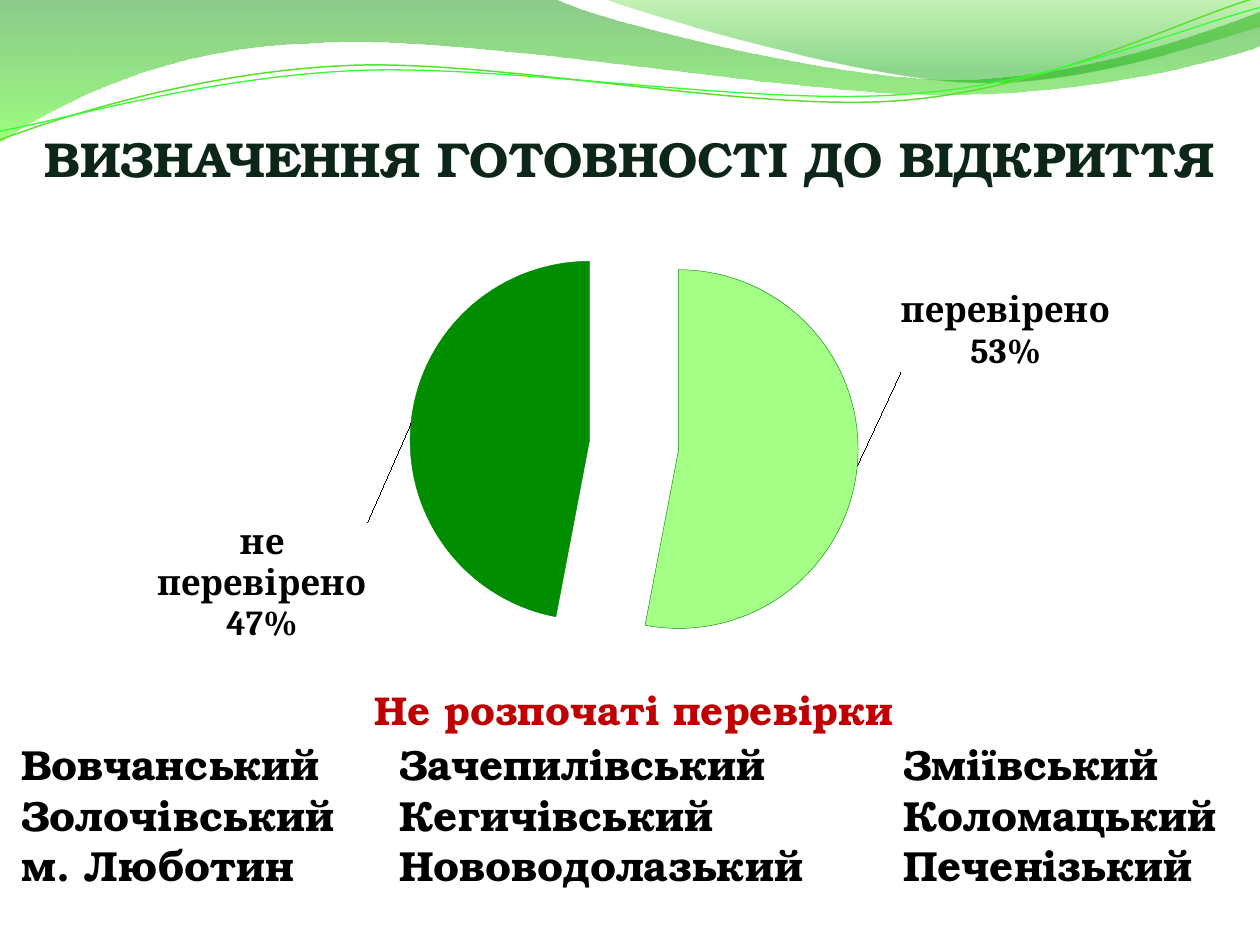
from lxml import etree
from pptx import Presentation, util as u
from pptx.chart.data import CategoryChartData
from pptx.dml.color import RGBColor
from pptx.enum import chart as ch, text
from pptx.oxml import ns

COLORS = {
    "title": "0D261A", "heading": "C00000", "ink": "000000",
    "checked": "A3FF85", "unchecked": "008D00",
    "dark": "008B00", "lime": "51FF17", "grass": "40D30F", "leaf": "00A600",
    "thread": "5AE12D", "neon": "33FF33",
}
SERIF = "TeX Gyre Bonum"


def apply(target, formats):
    for name, value in formats.items():
        if name == "color":
            target.color.rgb = RGBColor.from_string(COLORS[value])
        else:
            setattr(target, name, value)


def place(parent, index, **sizes):
    for old in parent.findall(ns.qn("c:layout")):
        parent.remove(old)
    layout = etree.Element(ns.qn("c:layout"))
    manual = etree.SubElement(layout, ns.qn("c:manualLayout"))
    for tag, value in sizes.items():
        etree.SubElement(manual, ns.qn("c:" + tag), val=str(value))
    parent.insert(index, layout)


prs = Presentation()
prs.slide_width, prs.slide_height = u.Cm(25.4), u.Cm(19.05)
slide = prs.slides.add_slide(prs.slide_layouts[1])

waves = [
    {"start": (0, 0), "stops": [("dark", 0, 45), ("lime", 1, 55)], "segments": [
        (4.4, -0.01), (4.76, 0.17, 6.64, 0.63, 7.58, 0.63), (8.53, 0.63, 9.58, 0.26, 10, 0.09),
        (10.01, 0.36), (9.83, 0.44, 8.7, 0.76, 7.46, 0.75), (6.22, 0.75, 3.82, 0.28, 2.57, 0.34),
        (1.29, 0.36, 0.46, 0.83, -0.01, 1.13)]},
    {"start": (4.79, -0.01), "stops": [("grass", 0, 30), ("leaf", 0.8, 45)], "segments": [
        (5.09, 0.11, 6.82, 0.62, 7.69, 0.65), (8.56, 0.69, 9.61, 0.32, 10, 0.21), (10, 0)]},
    {"start": (0, 1.11), "line": ("thread", 0.85), "segments": [
        (0.48, 0.93, 1.58, 0.57, 2.77, 0.52), (3.95, 0.47, 5.93, 0.89, 7.13, 0.8),
        (8.33, 0.71, 9.38, 0.15, 9.98, -0.02)]},
    {"start": (0, 1.04), "line": ("neon", 0.75), "segments": [
        (0.47, 0.96, 1.64, 0.61, 2.83, 0.56), (4.03, 0.51, 5.97, 0.84, 7.17, 0.75),
        (8.36, 0.67, 9.41, 0.21, 10, 0.06)]},
]
for order, wave in enumerate(waves):
    outline = slide.shapes.build_freeform(*[v * 100 for v in wave["start"]], scale=u.Cm(0.0254))
    for segment in wave["segments"]:
        pairs = zip(segment[::2], segment[1::2])
        outline.add_line_segments([(x * 100, y * 100) for x, y in pairs], close=False)
    ribbon = outline.convert_to_shape()
    ribbon.shadow.inherit = False
    contour = ribbon._element.find(".//" + ns.qn("a:path"))
    steps = iter(contour.findall(ns.qn("a:lnTo")))
    for segment in wave["segments"]:
        knots = [next(steps) for _ in segment[::2]]
        if len(knots) == 3:
            curve = etree.Element(ns.qn("a:cubicBezTo"))
            knots[0].addprevious(curve)
            for knot in knots:
                curve.append(knot[0])
                contour.remove(knot)
    if "stops" in wave:
        etree.SubElement(contour, ns.qn("a:close"))
        ribbon.line.fill.background()
        ribbon.fill.gradient()
        ribbon.fill.gradient_angle = 270
        for stop, (color, position, opacity) in zip(ribbon.fill.gradient_stops, wave["stops"]):
            apply(stop, {"color": color, "position": position})
            tint = stop._gs.find(ns.qn("a:srgbClr"))
            etree.SubElement(tint, ns.qn("a:alpha"), val=str(opacity * 1000))
    else:
        ribbon.fill.background()
        apply(ribbon.line, {"color": wave["line"][0], "width": u.Pt(wave["line"][1])})
    slide.shapes._spTree.insert(2 + order, ribbon._element)

title = slide.shapes.title
apply(title, {"left": u.Cm(0), "top": u.Cm(2.18), "width": u.Cm(25.4), "height": u.Cm(1.6)})
apply(title.text_frame, {
    "text": "ВИЗНАЧЕННЯ ГОТОВНОСТІ ДО ВІДКРИТТЯ", "vertical_anchor": text.MSO_ANCHOR.BOTTOM,
    "margin_left": 0, "margin_right": 0, "margin_top": u.Cm(0.13), "margin_bottom": 0,
    "word_wrap": True, "auto_size": text.MSO_AUTO_SIZE.NONE})
title.text_frame.paragraphs[0].alignment = text.PP_ALIGN.CENTER
apply(title.text_frame.paragraphs[0].runs[0].font,
      {"size": u.Pt(28), "name": SERIF, "bold": True, "color": "title"})

readiness = CategoryChartData()
readiness.categories = ["перевірено", "не перевірено"]
readiness.add_series("Series 1", (53, 47))
pie = slide.shapes.add_chart(ch.XL_CHART_TYPE.PIE, u.Cm(0.58), u.Cm(4.17),
                             u.Cm(24.41), u.Cm(9.32), readiness).chart
apply(pie, {"has_legend": False, "has_title": False})
apply(pie.font, {"size": u.Pt(18), "name": "Cambria", "color": "ink"})
pie.plots[0].vary_by_categories = True
place(pie._chartSpace.chart.plotArea, 0, layoutTarget="inner", xMode="edge", yMode="edge",
      x=0.03, y=0.03, w=0.94, h=0.97)

shares = pie.plots[0].series[0]
explosion = etree.Element(ns.qn("c:explosion"), val="25")
shares._element.find(ns.qn("c:tx")).addnext(explosion)
label_font = {"size": u.Pt(20), "bold": True, "name": "Cambria", "color": "ink"}
apply(shares.data_labels, {"show_percentage": True, "show_category_name": True, "show_value": False})
apply(shares.data_labels.font, label_font)
for index, color in enumerate(["checked", "unchecked"]):
    point = shares.points[index]
    point.format.fill.solid()
    point.format.fill.fore_color.rgb = RGBColor.from_string(COLORS[color])
    apply(point.format.line, {"color": "unchecked", "width": u.Pt(0.25)})
    point.data_label.position = ch.XL_LABEL_POSITION.OUTSIDE_END
    apply(point.data_label.font, label_font)
shifts = [(0.03, -0.38), (-0.03, 0.48)]
for label, (dx, dy) in zip(shares._element.iter(ns.qn("c:dLbl")), shifts):
    for tag, shown in {"showVal": "0", "showCatName": "1", "showPercent": "1"}.items():
        label.find(ns.qn("c:" + tag)).set("val", shown)
    etree.SubElement(label, ns.qn("c:separator")).text = "\n"
    place(label, 1, x=dx, y=dy)

districts = slide.placeholders[1]
apply(districts, {"left": u.Cm(0), "top": u.Cm(13.69), "width": u.Cm(25.4), "height": u.Cm(5.36)})
apply(districts.text_frame, {
    "text": "Не розпочаті перевірки\n"
            "Вовчанський \tЗачепилівський \tЗміївський "
            "Золочівський \tКегичівський \t\tКоломацький "
            "м. Люботин\tНововодолазький \tПеченізький",
    "margin_left": u.Cm(0.43), "word_wrap": True, "auto_size": text.MSO_AUTO_SIZE.NONE})
styles = [(text.PP_ALIGN.CENTER, 23, "heading"), (text.PP_ALIGN.LEFT, 24, "ink")]
for paragraph, (alignment, size, color) in zip(districts.text_frame.paragraphs, styles):
    apply(paragraph, {"alignment": alignment, "space_before": u.Pt(3)})
    apply(paragraph.runs[0].font, {"size": u.Pt(size), "name": SERIF, "bold": True, "color": color})
    props = paragraph._p.get_or_add_pPr()
    for name, length in {"marL": 0, "indent": 0, "defTabSz": u.Cm(2.54)}.items():
        props.set(name, str(int(length)))
    etree.SubElement(props, ns.qn("a:buNone"))

prs.save("out.pptx")
